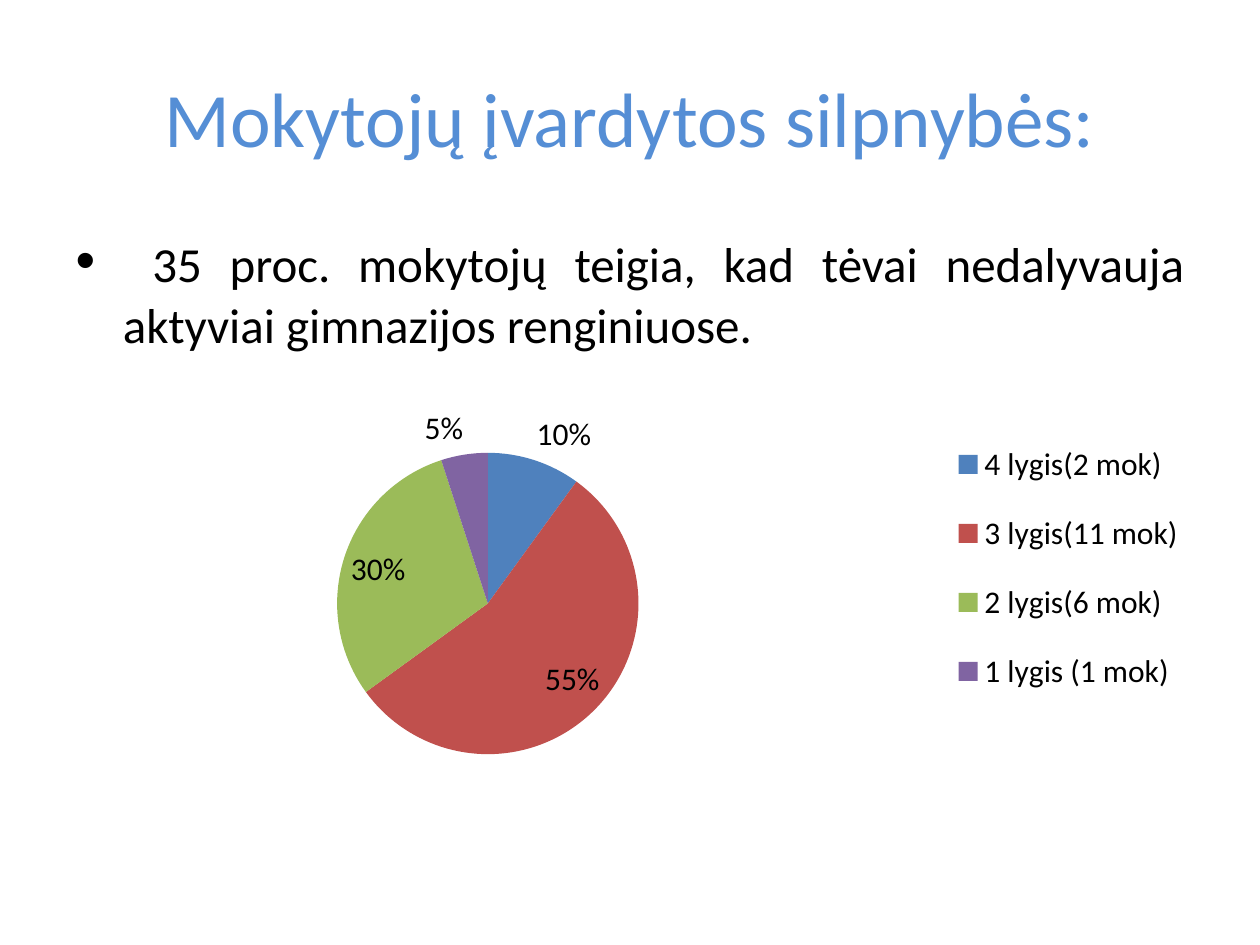
from lxml.etree import SubElement
from pptx import Presentation
from pptx.chart.data import CategoryChartData
from pptx.dml.color import RGBColor
from pptx.enum.chart import XL_CHART_TYPE, XL_LABEL_POSITION, XL_LEGEND_POSITION
from pptx.enum.text import MSO_ANCHOR, PP_ALIGN
from pptx.oxml.ns import qn
from pptx.util import Inches, Pt

WIDTH, HEIGHT = Inches(10), Inches(7.5)
FONT = "Calibri"
COLORS = {
    "title": "558ED5",
    "text": "000000",
    "level 4": "4F81BD",
    "level 3": "C0504D",
    "level 2": "9BBB59",
    "level 1": "8064A2",
}
LEVELS = [
    ("4 lygis(2 mok)", 10, "level 4"),
    ("3 lygis(11 mok)", 55, "level 3"),
    ("2 lygis(6 mok)", 30, "level 2"),
    ("1 lygis (1 mok)", 5, "level 1"),
]


def share_box(left, top, width, height):
    return (int(WIDTH * left), int(HEIGHT * top),
            int(WIDTH * width), int(HEIGHT * height))


def place(shape, box):
    shape.left, shape.top, shape.width, shape.height = box


def format_font(font, size, color):
    font.name = FONT
    font.size = Pt(size)
    font.color.rgb = RGBColor.from_string(COLORS[color])


def add_title(page, box):
    title = page.shapes.title
    place(title, box)
    title.text_frame.text = "Mokytojų įvardytos silpnybės:"
    title.text_frame.vertical_anchor = MSO_ANCHOR.MIDDLE
    para = title.text_frame.paragraphs[0]
    para.alignment = PP_ALIGN.CENTER
    format_font(para.runs[0].font, 44, "title")


def add_statement(page, box):
    body = page.placeholders[1]
    place(body, box)
    para = body.text_frame.paragraphs[0]
    para.alignment = PP_ALIGN.JUSTIFY
    statement = "35 proc. mokytojų teigia, kad tėvai nedalyvauja aktyviai gimnazijos renginiuose."
    for text, size in ((" ", 32), (statement, 28)):
        span = para.add_run()
        span.text = text
        format_font(span.font, size, "text")


def set_layout(part, after, shares, inner=False):
    for old in part.findall(qn("c:layout")):
        part.remove(old)
    layout = SubElement(part, qn("c:layout"))
    manual = SubElement(layout, qn("c:manualLayout"))
    settings = [("layoutTarget", "inner")] if inner else []
    settings += [("xMode", "edge"), ("yMode", "edge"), *zip("xywh", shares)]
    for name, value in settings:
        SubElement(manual, qn(f"c:{name}")).set("val", str(value))
    if after is None:
        part.insert(0, layout)
    else:
        after.addnext(layout)


def add_level_chart(page, box):
    data = CategoryChartData()
    data.categories = [name for name, _, _ in LEVELS]
    data.add_series("Series 1", [value for _, value, _ in LEVELS])
    chart = page.shapes.add_chart(XL_CHART_TYPE.PIE, *box, data).chart
    chart.has_title = False
    format_font(chart.font, 18, "text")

    plot = chart.plots[0]
    plot.vary_by_categories = True
    for index, (_, _, color) in enumerate(LEVELS):
        fill = plot.series[0].points[index].format.fill
        fill.solid()
        fill.fore_color.rgb = RGBColor.from_string(COLORS[color])
    plot.has_data_labels = True
    labels = plot.data_labels
    labels.show_value = False
    labels.show_percentage = True
    labels.number_format = "0%"
    labels.number_format_is_linked = False
    labels.position = XL_LABEL_POSITION.BEST_FIT
    format_font(labels.font, 18, "text")

    chart.has_legend = True
    legend = chart.legend
    legend.position = XL_LEGEND_POSITION.RIGHT
    legend.include_in_layout = False
    format_font(legend.font, 18, "text")

    area = chart.element.find(".//" + qn("c:plotArea"))
    set_layout(area, None, (0, 0.24, 0.76, 0.55), inner=True)
    key = chart.element.find(".//" + qn("c:legend"))
    set_layout(key, key.find(qn("c:legendPos")), (0.75, 0.17, 0.24, 0.56))


def build_slide(deck):
    page = deck.slides.add_slide(deck.slide_layouts[1])
    add_title(page, share_box(0.05, 0.04, 0.9, 1 / 6))
    add_statement(page, share_box(0.05, 0.7 / 3, 0.9, 0.66))
    add_level_chart(page, share_box(0.03, 0.34, 0.94, 0.58))


def main():
    deck = Presentation()
    deck.slide_width, deck.slide_height = WIDTH, HEIGHT
    build_slide(deck)
    deck.save("out.pptx")


if __name__ == "__main__":
    main()
